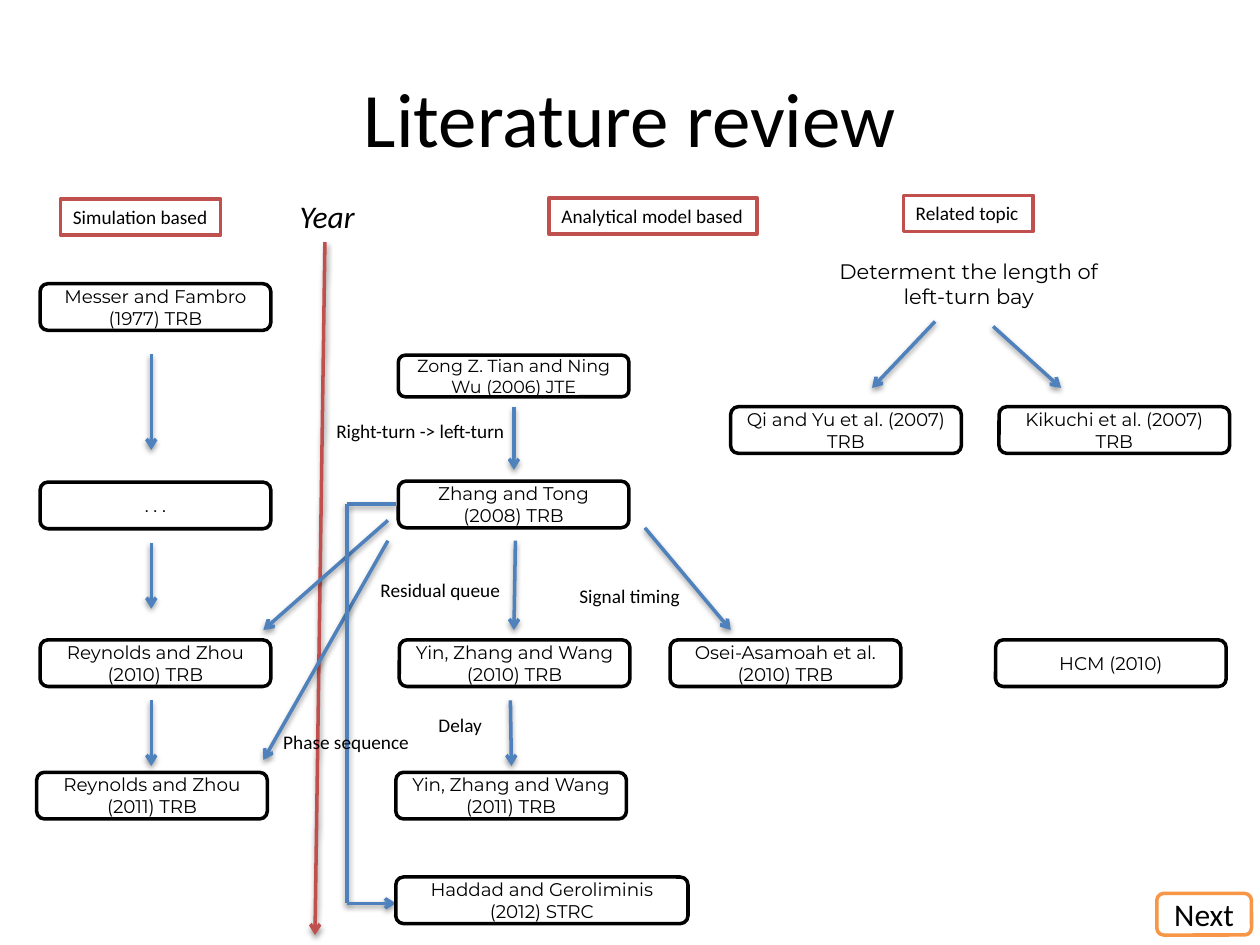
from lxml import etree
from pptx import Presentation
from pptx.dml.color import RGBColor
from pptx.enum.shapes import MSO_CONNECTOR, MSO_SHAPE
from pptx.enum.text import MSO_ANCHOR, MSO_AUTO_SIZE, PP_ALIGN
from pptx.oxml import parse_xml
from pptx.oxml.ns import qn
from pptx.util import Cm, Pt

STRAIGHT = MSO_CONNECTOR.STRAIGHT
RECT, ROUNDED = MSO_SHAPE.RECTANGLE, MSO_SHAPE.ROUNDED_RECTANGLE
MIDDLE, TOP = MSO_ANCHOR.MIDDLE, MSO_ANCHOR.TOP
LEFT, CENTER = PP_ALIGN.LEFT, PP_ALIGN.CENTER
FIT_SHAPE = MSO_AUTO_SIZE.SHAPE_TO_FIT_TEXT

BLACK, WHITE = "000000", "FFFFFF"
RED, BLUE, ORANGE = "C0504D", "4F81BD", "F79646"
BODY, PAPER_FONT = "Calibri", "Montserrat"

SHADOW = (
    '<a:effectLst xmlns:a="http://schemas.openxmlformats.org/drawingml/2006/main">'
    '<a:outerShdw blurRad="40000" dist="20000" dir="5400000" rotWithShape="0">'
    '<a:srgbClr val="000000"><a:alpha val="38000"/></a:srgbClr>'
    "</a:outerShdw></a:effectLst>"
)

# Papers: left, top, text (cm)
PAPER_WIDTH, PAPER_HEIGHT = 4.65, 0.94
PAPERS = [
    (0.81, 5.72, "Messer and Fambro (1977) TRB"),
    (0.81, 9.72, ". . ."),
    (0.81, 12.9, "Reynolds and Zhou (2010) TRB"),
    (0.74, 15.57, "Reynolds and Zhou (2011) TRB"),
    (8.03, 9.7, "Zhang and Tong (2008) TRB"),
    (8.05, 12.9, "Yin, Zhang and Wang (2010) TRB"),
    (7.98, 15.57, "Yin, Zhang and Wang (2011) TRB"),
    (13.51, 12.9, "Osei-Asamoah et al. (2010) TRB"),
    (14.73, 8.2, "Qi and Yu et al. (2007) TRB"),
    (20.14, 8.2, "Kikuchi et al. (2007) TRB"),
    (20.07, 12.9, "HCM (2010)"),
]

# Headings and arrow labels: left, top, width, text (cm)
LABEL_HEIGHT = 0.73
HEADINGS = [
    (1.22, 4.01, 3.23, "Simulation based"),
    (11.07, 3.99, 4.19, "Analytical model based"),
    (18.21, 3.94, 2.62, "Related topic"),
]
LABELS = [
    (6.53, 8.33, 3.96, "Right-turn -> left-turn"),
    (7.42, 11.53, 2.95, "Residual queue"),
    (8.59, 14.25, 1.4, "Delay"),
    (11.43, 11.66, 2.54, "Signal timing"),
    (5.46, 14.6, 3.05, "Phase sequence"),
]

# Each route is a list of points and ends in an arrowhead (cm)
ROUTES = [
    [(3.05, 7.14), (3.05, 9.07)],
    [(3.05, 10.95), (3.05, 12.27)],
    [(3.05, 14.12), (3.05, 15.44)],
    [(10.36, 8.2), (10.36, 9.47)],
    [(10.39, 10.9), (10.36, 12.7)],
    [(10.29, 14.12), (10.31, 15.44)],
    [(13, 10.64), (14.73, 12.7)],
    [(7.82, 10.49), (5.31, 12.7)],
    [(7.82, 10.9), (5.31, 15.32)],
    [(18.85, 6.48), (17.58, 7.82)],
    [(20.02, 6.58), (21.39, 7.82)],
    [(7.98, 10.16), (6.99, 10.16), (6.99, 18.21), (7.98, 18.21)],
]


def rgb(color):
    return RGBColor.from_string(color)


def write(shape, text, size, font=BODY, align=LEFT, anchor=TOP, wrap=True, italic=None):
    frame = shape.text_frame
    frame.text = text
    frame.word_wrap = wrap
    frame.vertical_anchor = anchor
    paragraph = frame.paragraphs[0]
    paragraph.alignment = align
    paragraph.font.name = font
    paragraph.font.size = Pt(size)
    paragraph.font.italic = italic
    paragraph.font.color.rgb = rgb(BLACK)


def add_box(slide, kind, box, border, text, size, **style):
    shape = slide.shapes.add_shape(kind, *map(Cm, box))
    shape.shadow.inherit = False
    shape.fill.solid()
    shape.fill.fore_color.rgb = rgb(WHITE)
    shape.line.color.rgb = rgb(border)
    shape.line.width = Pt(2)
    write(shape, text, size, **style)


def add_paper(slide, left, top, text, width=PAPER_WIDTH, height=PAPER_HEIGHT, size=10.5):
    add_box(slide, ROUNDED, (left, top, width, height), BLACK, text, size,
            font=PAPER_FONT, align=CENTER, anchor=MIDDLE)


def add_label(slide, box, text, size, **style):
    label = slide.shapes.add_textbox(*map(Cm, box))
    write(label, text, size, **style)
    label.text_frame.auto_size = FIT_SHAPE


def add_route(slide, points, color):
    for start, end in zip(points, points[1:]):
        segment = slide.shapes.add_connector(STRAIGHT, *map(Cm, start + end))
        segment.line.color.rgb = rgb(color)
        segment.line.width = Pt(2)
        segment._element.spPr.append(parse_xml(SHADOW))
    etree.SubElement(segment.line._get_or_add_ln(), qn("a:tailEnd"), type="arrow")


def main():
    deck = Presentation()
    deck.slide_width, deck.slide_height = Cm(25.4), Cm(19.05)
    slide = deck.slides.add_slide(deck.slide_layouts[5])

    # Title
    title = slide.shapes.title
    title.left, title.top, title.width, title.height = map(Cm, (1.27, 0.76, 22.86, 3.18))
    write(title, "Literature review", 44, align=CENTER, anchor=MIDDLE)

    # Time axis and links between papers
    add_route(slide, [(6.55, 4.88), (6.35, 18.85)], RED)
    add_label(slide, (5.79, 3.84, 1.63, 1.02), "Year", 18, wrap=False, italic=True)
    for points in ROUTES:
        add_route(slide, points, BLUE)

    # Column headings
    for left, top, width, text in HEADINGS:
        add_box(slide, RECT, (left, top, width, LABEL_HEIGHT), RED, text, 11, wrap=False)
    add_label(slide, (16.61, 5.08, 5.84, 1.27), "Determent the length of left-turn bay",
              12, font=PAPER_FONT, align=CENTER)

    # Papers
    for left, top, text in PAPERS:
        add_paper(slide, left, top, text)
    add_paper(slide, 8.03, 7.16, "Zong Z. Tian and Ning Wu (2006) JTE", height=0.84, size=10)
    add_paper(slide, 7.98, 17.68, "Haddad and Geroliminis (2012) STRC", width=5.89)

    # Arrow labels
    for left, top, width, text in LABELS:
        add_label(slide, (left, top, width, LABEL_HEIGHT), text, 11, wrap=False)

    # Next button
    add_box(slide, ROUNDED, (23.32, 18.01, 1.91, 0.84), ORANGE, "Next", 18,
            align=CENTER, anchor=MIDDLE, wrap=False)

    deck.save("out.pptx")


if __name__ == "__main__":
    main()
